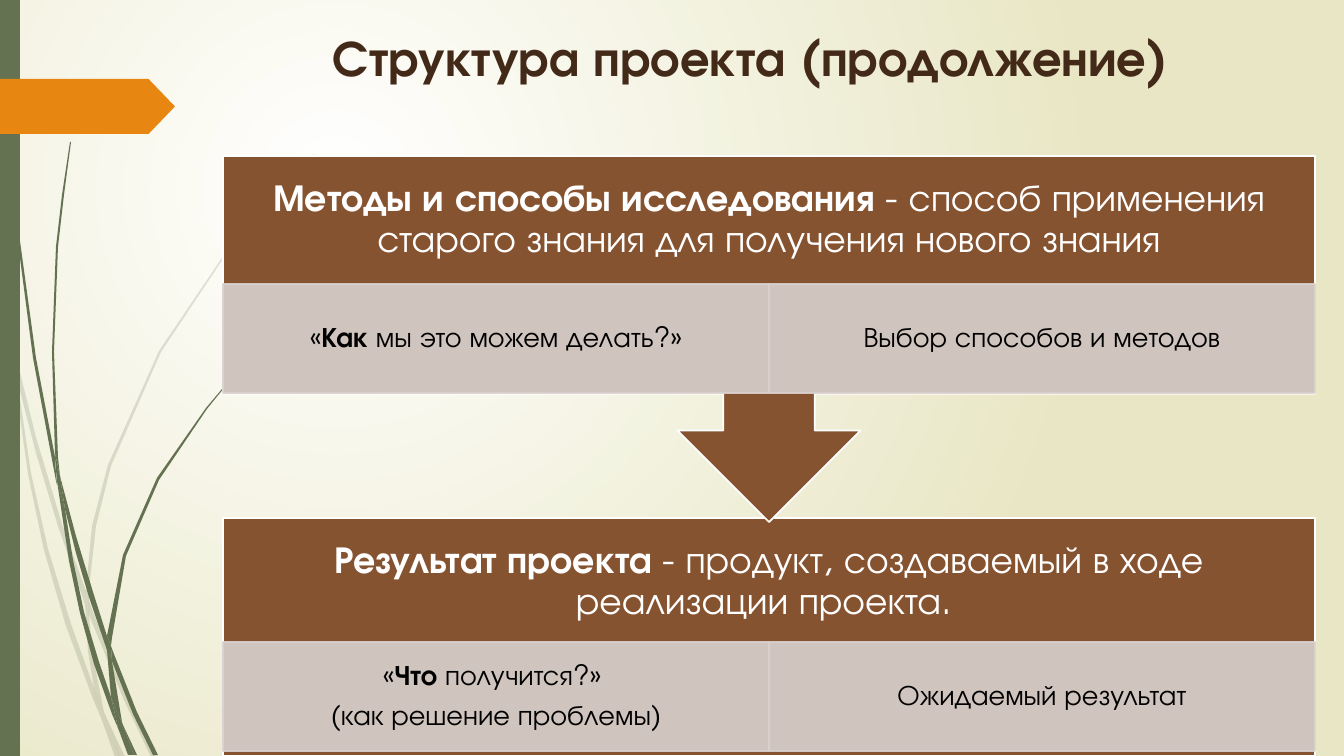
from dataclasses import dataclass

from lxml import etree
from pptx import Presentation
from pptx import util as u
from pptx.dml.color import RGBColor
from pptx.enum import shapes, text
from pptx.oxml.ns import qn

EMU_PER_PX = 12192000 / 1344


@dataclass(frozen=True)
class Theme:
    font: str = "TeX Gyre Adventor"
    glow: str = "FFFFFF"
    cream: str = "E8E6C4"
    green: str = "647252"
    orange: str = "E78712"
    title_ink: str = "432918"
    brown: str = "865331"
    cell: str = "D9D1CE"
    white: str = "FFFFFF"
    black: str = "000000"
    title_size: int = 36
    header_size: int = 27
    cell_size: int = 20
    border: float = 1.25


THEME = Theme()

# Grass: outline of each piece of a blade, in px
PALE_GRASS = [
    [(11, 353), (9, 325), (0, 284), (0, 301), (10, 347)],
    [(58, 526), (85, 604), (86, 591), (62, 524), (36, 437), (14, 348), (17, 379), (36, 453)],
    [(93, 612), (89, 601), (89, 615), (124, 700), (151, 757), (156, 757), (128, 698)],
    [(120, 757), (125, 757), (106, 717)],
    [(94, 688), (71, 624), (48, 549), (31, 473), (17, 379), (11, 353), (28, 474), (44, 550),
     (66, 626), (93, 699), (102, 720), (100, 713)],
    [(85, 604), (88, 651), (94, 688), (97, 698), (106, 717), (104, 712), (92, 651), (89, 615),
     (89, 613)],
    [(89, 589), (96, 526), (111, 466), (161, 352), (231, 247), (270, 200), (292, 176),
     (314, 155), (314, 154), (291, 176), (270, 199), (230, 246), (159, 351), (108, 465),
     (92, 526), (86, 589), (86, 591), (89, 601)],
    [(102, 720), (115, 757), (120, 757)],
    [(89, 613), (89, 615), (89, 601), (86, 591), (85, 604)],
    [(97, 698), (94, 688), (100, 713), (102, 720), (120, 757), (106, 717)],
]
DARK_GRASS = [
    [(7, 111), (17, 235), (33, 358), (56, 481), (57, 485), (55, 461), (55, 457), (36, 358),
     (19, 234), (8, 110), (5, 48), (4, 0), (3, 0), (4, 48)],
    [(89, 597), (107, 650), (107, 638), (107, 636), (94, 595), (76, 536), (60, 476), (65, 509),
     (76, 553)],
    [(114, 654), (111, 646), (112, 661), (133, 714), (153, 755), (158, 755), (137, 712)],
    [(111, 697), (99, 662), (84, 612), (73, 560), (65, 509), (57, 481), (69, 561), (80, 613),
     (94, 664), (112, 714), (118, 728), (117, 723)],
    [(60, 476), (58, 457), (54, 352), (58, 247), (64, 195), (71, 142), (70, 142), (62, 195),
     (56, 247), (52, 352), (55, 453)],
    [(134, 755), (137, 755), (123, 725)],
    [(57, 481), (65, 509), (60, 476), (55, 453), (55, 457)],
    [(112, 638), (126, 556), (159, 480), (207, 409), (233, 377), (247, 362), (263, 347),
     (262, 347), (247, 361), (233, 376), (206, 408), (157, 478), (123, 555), (107, 636),
     (111, 646)],
    [(118, 728), (128, 755), (132, 755)],
    [(107, 650), (111, 697), (117, 712), (123, 725), (122, 722), (112, 661), (110, 656)],
    [(107, 650), (110, 656), (112, 661), (111, 646), (107, 636), (107, 638)],
    [(117, 712), (111, 697), (117, 723), (118, 728), (131, 755), (134, 755), (123, 725)],
]


def px(length):
    return u.Emu(round(length * EMU_PER_PX))


def rgb(colour):
    return RGBColor.from_string(colour)


def set_alpha(fill_parent, percent):
    for colour in fill_parent.iter(qn("a:srgbClr")):
        etree.SubElement(colour, qn("a:alpha"), val=str(percent * 1000))


def paint(shape, fill, line=None, alpha=100):
    shape.shadow.inherit = False
    shape.fill.solid()
    shape.fill.fore_color.rgb = rgb(fill)
    if line:
        shape.line.color.rgb = rgb(line)
        shape.line.width = u.Pt(THEME.border)
    else:
        shape.line.fill.background()
    if alpha < 100:
        set_alpha(shape._element.spPr, alpha)


def add_block(page, kind, frame, fill, line=None, alpha=100):
    shape = page.shapes.add_shape(kind, *map(px, frame))
    paint(shape, fill, line, alpha)
    return shape


def add_blade(page, outline, alpha):
    builder = page.shapes.build_freeform(*outline[0], scale=EMU_PER_PX)
    builder.add_line_segments(outline[1:], close=True)
    paint(builder.convert_to_shape(), THEME.green, alpha=alpha)


def write(box, paragraphs, size, colour, anchor, insets, tight=True):
    """Fill a box with centred paragraphs, each a list of (words, bold)."""
    frame = box.text_frame
    frame.word_wrap = True
    frame.vertical_anchor = anchor
    frame.margin_left = frame.margin_right = px(insets[0])
    frame.margin_top = frame.margin_bottom = px(insets[1])
    for index, spans in enumerate(paragraphs):
        para = frame.add_paragraph() if index else frame.paragraphs[0]
        para.alignment = text.PP_ALIGN.CENTER
        if tight:
            para.line_spacing = 0.9
            para.space_after = u.Pt(size * 0.35)
        for words, bold in spans:
            span = para.add_run()
            span.text = words
            span.font.name = THEME.font
            span.font.size = u.Pt(size)
            span.font.bold = bold
            span.font.color.rgb = rgb(colour)


def add_label(page, frame, *args, **options):
    box = page.shapes.add_textbox(*map(px, frame))
    write(box, *args, **options)


def add_background(page):
    fill = page.background.fill
    fill.gradient()
    for stop, colour in zip(fill.gradient_stops, (THEME.glow, THEME.cream)):
        stop.color.rgb = rgb(colour)
    gradient = next(page._element.iter(qn("a:gradFill")))
    gradient.remove(gradient.find(qn("a:lin")))
    circle = etree.SubElement(gradient, qn("a:path"), {"path": "circle"})
    etree.SubElement(circle, qn("a:fillToRect"), l="50000", t="50000", r="100000", b="100000")


def add_header(page, top, spans):
    add_label(page, (223, top, 1092, 128), [spans], THEME.header_size, THEME.white,
              text.MSO_ANCHOR.MIDDLE, (21, 21))


def add_cells(page, top, cells):
    for column, paragraphs in enumerate(cells):
        cell = add_block(page, shapes.MSO_SHAPE.RECTANGLE, (223 + 546 * column, top, 546, 109),
                         THEME.cell, THEME.cell, alpha=90)
        write(cell, paragraphs, THEME.cell_size, THEME.black, text.MSO_ANCHOR.MIDDLE, (16, 3))


def main():
    deck = Presentation()
    deck.slide_width, deck.slide_height = px(1344), px(756)
    page = deck.slides.add_slide(deck.slide_layouts[6])

    # Backdrop: gradient, grass, side bar and marker
    add_background(page)
    for grass, alpha in ((PALE_GRASS, 20), (DARK_GRASS, 100)):
        for outline in grass:
            add_blade(page, outline, alpha)
    add_block(page, shapes.MSO_SHAPE.RECTANGLE, (0, 0, 20, 756), THEME.green)
    marker = add_block(page, shapes.MSO_SHAPE.PENTAGON, (0, 79, 175, 55), THEME.orange)
    marker.adjustments[0] = 0.48

    # Title
    add_label(page, (232, 21, 1037, 99), [[("Структура проекта (продолжение)", True)]],
              THEME.title_size, THEME.title_ink, text.MSO_ANCHOR.TOP, (10, 5), tight=False)

    # Project result
    add_block(page, shapes.MSO_SHAPE.RECTANGLE, (223, 518, 1092, 238), THEME.brown, THEME.white)
    add_header(page, 518, [("Результат проекта ", True),
                           ("- продукт, создаваемый в ходе реализации проекта. ", False)])
    add_cells(page, 642, [
        [[("«", False), ("Что", True), (" получится?» ", False)],
         [("(как решение проблемы)", False)]],
        [[("Ожидаемый результат", False)]],
    ])

    # Research methods, with the arrow leading down to the result
    callout = add_block(page, shapes.MSO_SHAPE.UP_ARROW_CALLOUT, (223, 156, 1092, 366),
                        THEME.brown, THEME.white)
    callout.rotation = 180
    add_header(page, 156, [("Методы и способы исследования ", True),
                           ("- способ применения старого знания для получения нового знания", False)])
    add_cells(page, 284, [
        [[("«", False), ("Как", True), (" мы это можем делать?»", False)]],
        [[("Выбор способов и методов", False)]],
    ])

    deck.save("out.pptx")


if __name__ == "__main__":
    main()
